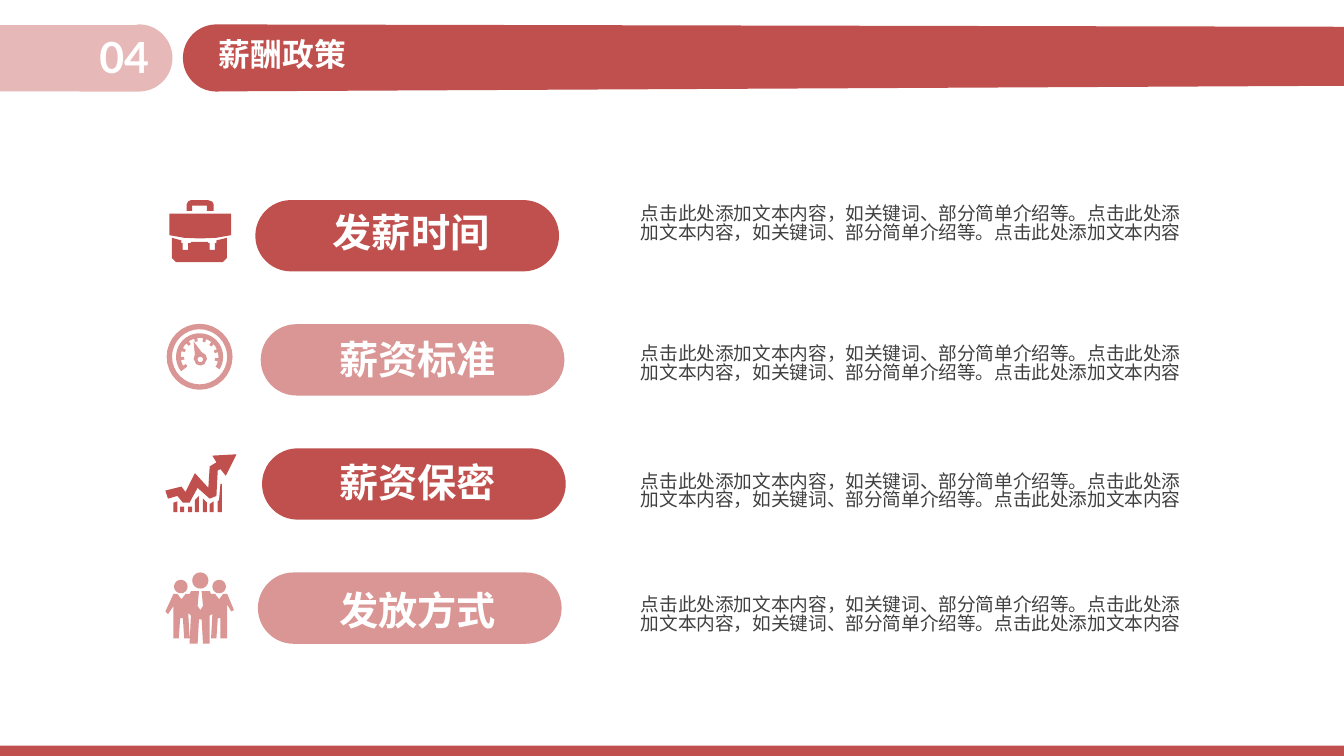
import math

import pptx
import pptx.dml.color
import pptx.enum.shapes
import pptx.enum.text
import pptx.oxml
import pptx.oxml.ns
import pptx.util

COLORS = {
    "red": "C0504D",
    "rose": "D99694",
    "blush": "E6B9B8",
    "white": "FFFFFF",
    "text": "404040",
}
CJK_FONT = "Noto Sans CJK SC"
ICON_UNIT = 0.72  # points per icon grid step


def arc(cx, cy, r, start=0, end=360, steps=32):
    """Points along an arc, angles in degrees clockwise from the right."""
    angles = [math.radians(start + (end - start) * i / steps) for i in range(steps + 1)]
    return [(cx + r * math.cos(a), cy + r * math.sin(a)) for a in angles]


def dial_scale(cx, cy, start=142, end=392, teeth=9):
    """Band of a gauge with teeth on its inner edge."""
    pitch = (end - start) / teeth
    inner = []
    for i in range(teeth):
        a = end - i * pitch
        inner += arc(cx, cy, 14, a, a - pitch * 0.65, 4)
        inner += arc(cx, cy, 11.5, a - pitch * 0.65, a - pitch, 2)
    return arc(cx, cy, 17.5, start, end) + inner


def bar(x, left_top, right_top):
    return [(x, left_top), (x + 3, right_top), (x + 3, 43), (x, 43)]


# Icons: closed outlines on a grid, from the icon's top left corner
BRIEFCASE = [
    [(43, 28), (43, 43), (40, 46), (5, 46), (2, 43), (2, 28), (9, 30), (9, 32),
     (10, 32), (10, 37), (14, 37), (14, 32), (16, 32), (16, 31), (29, 31), (29, 32),
     (30, 32), (30, 37), (34, 37), (34, 32), (35, 32), (35, 30)],
    [(16, 0), (29, 0), (32, 1), (33, 3), (33, 8), (28, 8), (28, 4), (17, 4),
     (17, 8), (13, 8), (13, 3), (14, 1)],
    [(0, 10), (46, 10), (46, 26), (35, 28), (23, 28.5), (11, 28), (0, 26)],
]
GAUGE = [
    arc(24.5, 24.5, 24.5),
    arc(24.5, 24.5, 20.5),
    dial_scale(24.5, 24.5),
    [(21, 23), (20, 13), (26, 21), (29, 23), (30, 26), (28, 30), (25, 31),
     (22, 30), (20, 26)],
    arc(25, 26.5, 2),
]
GROWTH = [
    [(53, 0), (45, 16), (41, 11), (39, 12), (38, 31), (33, 33), (24, 25), (18, 36),
     (13, 36), (9, 31), (2, 33), (0, 27), (12, 24), (15, 28), (22, 14), (32, 25),
     (33, 9), (38, 6), (35, 1)],
    [(39, 43), (42, 43), (42, 22), (41, 22), (40, 34), (39, 35)],
    bar(6, 36, 35), bar(11, 39, 39), bar(17, 39, 39),
    bar(22, 34, 31), bar(28, 33, 36), bar(33, 37, 35),
]
TEAM = [
    arc(26, 6, 6),
    arc(40, 10.5, 5),
    arc(11.5, 10.5, 5),
    [(17, 30), (18, 49), (14, 49), (13, 34), (11, 34), (10, 49), (6, 49), (6, 25),
     (2, 31), (0, 29), (6, 16), (9, 16), (12, 20), (15, 16), (18, 16), (19, 14),
     (25, 14), (24, 25), (26, 28), (28, 25), (27, 14), (33, 14), (34, 16), (37, 16),
     (40, 20), (43, 16), (46, 16), (51, 28), (49, 29), (46, 24), (46, 49), (41, 49),
     (41, 34), (39, 34), (38, 49), (34, 49), (35, 31), (33, 32), (33, 53), (28, 53),
     (27, 35), (25, 35), (24, 53), (18, 53), (19, 32)],
]

DESCRIPTION = ("点击此处添加文本内容，如关键词、部分简单介绍等。"
               "点击此处添加文本内容，如关键词、部分简单介绍等。点击此处添加文本内容")
# label, colour, pill left, label left, label top, description top, icon, icon left, icon top
POLICIES = [
    ("发薪时间", "red", 136.8, 172.3, 111.6, 107.3, BRIEFCASE, 90.7, 107.3),
    ("薪资标准", "rose", 139.7, 175.6, 179.3, 182.2, GAUGE, 89.3, 173.5),
    ("薪资保密", "red", 140.4, 175.6, 245.5, 250.6, GROWTH, 88.6, 243.4),
    ("发放方式", "rose", 138.2, 175.6, 313.9, 316.8, TEAM, 88.6, 306.7),
]


class SlidePainter:
    def __init__(self, slide):
        self.slide = slide

    def paint(self, shape, color):
        shape.shadow.inherit = False
        shape.fill.solid()
        shape.fill.fore_color.rgb = pptx.dml.color.RGBColor.from_string(COLORS[color])
        shape.line.fill.background()

    def box(self, kind, left, top, width, height, color):
        frame = [pptx.util.Pt(v) for v in (left, top, width, height)]
        shape = self.slide.shapes.add_shape(kind, *frame)
        self.paint(shape, color)
        return shape

    def pill(self, left, top, width, height, color):
        kind = pptx.enum.shapes.MSO_SHAPE.ROUNDED_RECTANGLE
        self.box(kind, left, top, width, height, color).adjustments[0] = 0.5

    def outline(self, contours, color, left=0, top=0, unit=1):
        placed = [[(pptx.util.Pt(left + x * unit), pptx.util.Pt(top + y * unit))
                   for x, y in contour] for contour in contours]
        builder = self.slide.shapes.build_freeform(*placed[0][0])
        for i, contour in enumerate(placed):
            if i:
                builder.move_to(*contour[0])
            builder.add_line_segments(contour[1:], close=True)
        self.paint(builder.convert_to_shape(), color)

    def text(self, words, left, top, width, height, size, font, color="white", bold=True,
             wrap=False, insets=(5, 3), align="LEFT", spacing=1.0):
        frame = [pptx.util.Pt(v) for v in (left, top, width, height)]
        body = self.slide.shapes.add_textbox(*frame).text_frame
        body.word_wrap = wrap
        body.auto_size = pptx.enum.text.MSO_AUTO_SIZE.SHAPE_TO_FIT_TEXT
        body.margin_left = body.margin_right = pptx.util.Pt(insets[0])
        body.margin_top = body.margin_bottom = pptx.util.Pt(insets[1])
        body.text = words
        paragraph = body.paragraphs[0]
        paragraph.alignment = getattr(pptx.enum.text.PP_ALIGN, align)
        paragraph.line_spacing = spacing
        run = paragraph.runs[0]
        run.font.size = pptx.util.Pt(size)
        run.font.bold = bold
        run.font.name = font
        run.font.color.rgb = pptx.dml.color.RGBColor.from_string(COLORS[color])
        # East Asian typeface
        east_asian = pptx.oxml.parse_xml(
            f'<a:ea {pptx.oxml.ns.nsdecls("a")} typeface="{CJK_FONT}"/>')
        run.font._element.find(pptx.oxml.ns.qn("a:latin")).addnext(east_asian)


def main():
    deck = pptx.Presentation()
    deck.slide_width = pptx.util.Pt(720)
    deck.slide_height = pptx.util.Pt(405)
    painter = SlidePainter(deck.slides.add_slide(deck.slide_layouts[6]))

    # Footer strip and header bands
    painter.box(pptx.enum.shapes.MSO_SHAPE.RECTANGLE, 0, 399.5, 721.4, 6.5, "red")
    painter.outline([[(0, 13.5), (72, 13.5)] + arc(74.4, 31.1, 18, -90, 90) + [(0, 49)]],
                    "blush")
    painter.outline([arc(116, 31.1, 18, 90, 270) + [(720, 14.4), (720, 46), (118.8, 49)]],
                    "red")
    painter.text("04", 46.1, 13, 41.8, 35.3, 23, "Lato", insets=(7.2, 3.6))
    painter.text("薪酬政策", 110.2, 17.3, 83.5, 28.1, 17, "Lato", insets=(7.2, 3.6),
                 spacing=0.9)

    # One row per policy
    for row, (label, color, pill_left, label_left, label_top, description_top,
              icon, icon_left, icon_top) in enumerate(POLICIES):
        painter.pill(pill_left, 107.2 + 66.5 * row, 162.7, 38.2, color)
        painter.outline(icon, color, icon_left, icon_top, ICON_UNIT)
        painter.text(label, label_left, label_top, 96, 31, 21, "Arial", align="CENTER",
                     spacing=0.9)
        painter.text(DESCRIPTION, 338.4, description_top, 306, 41.8, 10, CJK_FONT,
                     color="text", bold=False, wrap=True, spacing=0.83)

    deck.save("out.pptx")


if __name__ == "__main__":
    main()
